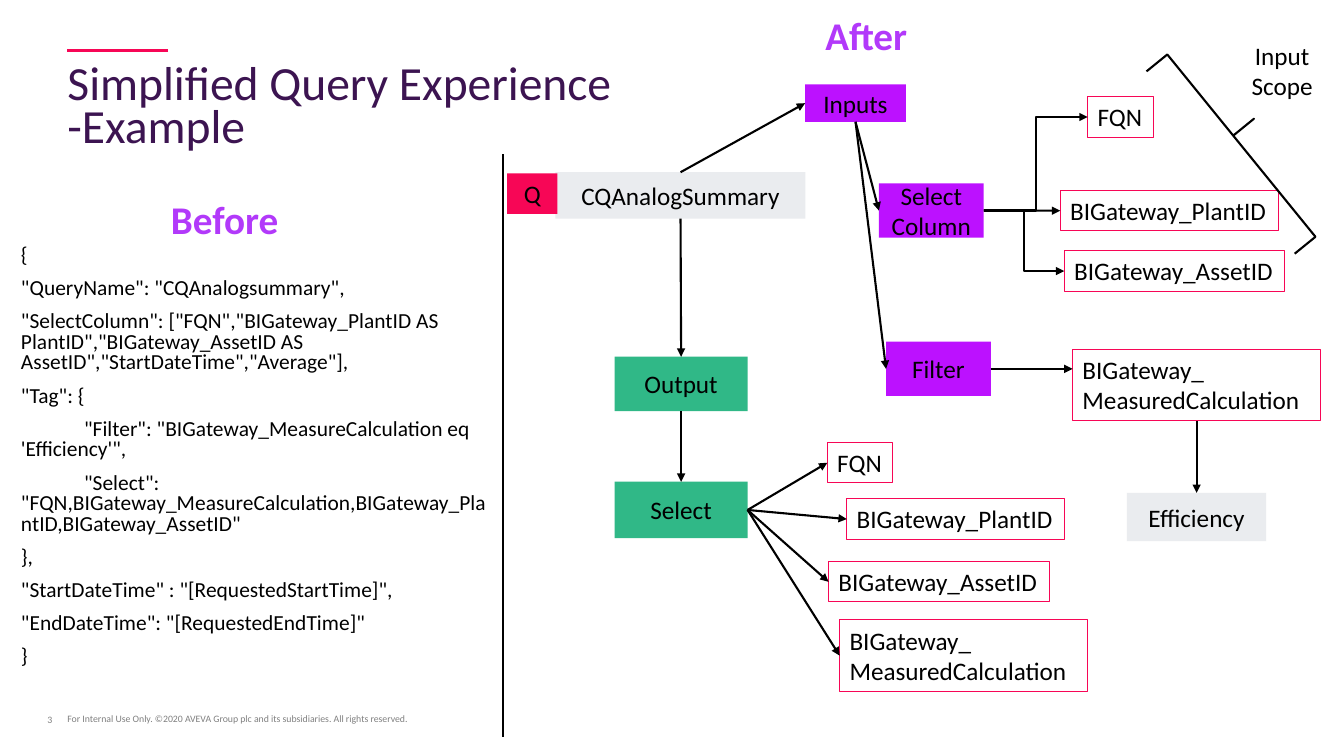
"""Builds a slide that sets a JSON query beside its simplified diagram."""
from dataclasses import dataclass

from lxml import etree
from pptx import Presentation, util as u
from pptx.dml.color import RGBColor
from pptx.enum import shapes, text
from pptx.oxml import ns


@dataclass(frozen=True)
class Theme:
    font: str = "Calibri"
    ink: str = "000000"
    title: str = "3C1451"
    heading: str = "B239FA"
    footer: str = "808080"
    accent: str = "FBBA3F"
    red: str = "F70656"
    grey: str = "EAECEF"
    purple: str = "BC11FF"
    green: str = "30B887"
    title_size: float = 34
    heading_size: float = 28
    node_size: float = 18
    code_size: float = 15.3
    footer_size: float = 7
    line_width: float = 1.5
    border_width: float = 0.75


THEME = Theme(accent="F70656")
LEFT, CENTER, RIGHT = text.PP_ALIGN.LEFT, text.PP_ALIGN.CENTER, text.PP_ALIGN.RIGHT
TOP, MIDDLE, BOTTOM = text.MSO_ANCHOR.TOP, text.MSO_ANCHOR.MIDDLE, text.MSO_ANCHOR.BOTTOM

TITLE = "Simplified Query Experience -Example"
FOOTER = "For Internal Use Only. ©2020 AVEVA Group plc and its subsidiaries. All rights reserved."
PAGE_NUMBER = "3"
QUERY = [
    "{",
    '"QueryName": "CQAnalogsummary",',
    '"SelectColumn": ["FQN","BIGateway_PlantID AS PlantID","BIGateway_AssetID AS AssetID",'
    '"StartDateTime","Average"],',
    '"Tag": {',
    "             \"Filter\": \"BIGateway_MeasureCalculation eq 'Efficiency'\",",
    '             "Select": "FQN,BIGateway_MeasureCalculation,BIGateway_PlantID,BIGateway_AssetID"',
    "},",
    '"StartDateTime" : "[RequestedStartTime]",',
    '"EndDateTime": "[RequestedEndTime]"',
    "}",
]
HEADINGS = [("Before", (4.06, 4.8, 3.25, 1.45)), ("After", (20.55, 0.15, 2.64, 1.45))]

STEPS = {
    "summary": (["CQAnalogSummary"], (14, 4.34, 6.3, 1.17), THEME.grey),
    "query": (["Q"], (12.78, 4.37, 1.27, 1.02), THEME.red),
    "inputs": (["Inputs"], (20.29, 2.13, 2.54, 0.94), THEME.purple),
    "columns": (["Select", "Column"], (22.15, 4.62, 2.64, 1.37), THEME.purple),
    "filter": (["Filter"], (22.33, 8.61, 2.64, 1.37), THEME.purple),
    "output": (["Output"], (15.49, 8.99, 3.35, 1.37), THEME.green),
    "select": (["Select"], (15.49, 12.14, 3.35, 1.42), THEME.green),
    "efficiency": (["Efficiency"], (28.4, 12.42, 3.51, 1.22), THEME.grey),
}
FIELDS = {
    "fqn": (["FQN"], (1.65, 1.02)),
    "plant": (["BIGateway_PlantID"], (5.49, 1.02)),
    "asset": (["BIGateway_AssetID"], (5.56, 1.02)),
    "measure": (["BIGateway_", "MeasuredCalculation"], (6.25, 1.8)),
}
FIELD_PLACES = {
    "input": {"fqn": (27.41, 2.44), "plant": (26.72, 4.8),
              "asset": (26.82, 6.32), "measure": (27.03, 8.81)},
    "output": {"fqn": (20.85, 11.15), "plant": (21.34, 12.57),
               "asset": (20.88, 14.15), "measure": (21.16, 15.62)},
}
SITES = {"top": (0, 0.5, 0), "left": (1, 0, 0.5), "bottom": (2, 0.5, 1), "right": (3, 1, 0.5)}
STRAIGHT, BENT = shapes.MSO_CONNECTOR.STRAIGHT, shapes.MSO_CONNECTOR.ELBOW
LINKS = [
    ("summary", "top", "inputs", "left", STRAIGHT),
    ("summary", "bottom", "output", "top", STRAIGHT),
    ("output", "bottom", "select", "top", STRAIGHT),
    ("inputs", "bottom", "columns", "left", STRAIGHT),
    ("inputs", "bottom", "filter", "left", STRAIGHT),
    ("columns", "right", "input fqn", "left", BENT),
    ("columns", "right", "input plant", "left", STRAIGHT),
    ("columns", "right", "input asset", "left", BENT),
    ("input measure", "bottom", "efficiency", "top", STRAIGHT),
] + [("select", "right", f"output {field}", "left", STRAIGHT) for field in FIELDS]


def write(shape, lines, size, color=THEME.ink, align=LEFT, anchor=TOP, bold=False,
          inset=True, wrap=True, spacing=None, after=None):
    frame = shape.text_frame
    frame.word_wrap = wrap
    frame.vertical_anchor = anchor
    if not inset:
        frame.margin_left = frame.margin_right = frame.margin_top = frame.margin_bottom = 0
    for index, line in enumerate(lines):
        paragraph = frame.add_paragraph() if index else frame.paragraphs[0]
        paragraph.alignment = align
        if spacing:
            paragraph.line_spacing = spacing
        if after:
            paragraph.space_after = u.Pt(after)
        run = paragraph.add_run()
        run.text = line
        run.font.name, run.font.size, run.font.bold = THEME.font, u.Pt(size), bold
        run.font.color.rgb = RGBColor.from_string(color)


def add_text(slide, box, lines, size, **style):
    write(slide.shapes.add_textbox(*map(u.Cm, box)), lines, size, **style)


def add_box(slide, box, fill=None, border=None, width=THEME.border_width,
            preset=shapes.MSO_SHAPE.RECTANGLE):
    shape = slide.shapes.add_shape(preset, *map(u.Cm, box))
    shape.shadow.inherit = False
    for part, color in ((shape.fill, fill), (shape.line.fill, border)):
        if color:
            part.solid()
            part.fore_color.rgb = RGBColor.from_string(color)
        else:
            part.background()
    if border:
        shape.line.width = u.Pt(width)
    return shape


def add_line(slide, start, end, color=THEME.ink, width=THEME.line_width, kind=STRAIGHT, arrow=False):
    line = slide.shapes.add_connector(kind, *start, *end)
    line.line.color.rgb = RGBColor.from_string(color)
    line.line.width = u.Pt(width)
    if arrow:
        etree.SubElement(line.line._get_or_add_ln(), ns.qn("a:tailEnd"), type="triangle")
    etree.SubElement(line._element.spPr, ns.qn("a:effectLst"))
    return line


def site_point(shape, side):
    _, across, down = SITES[side]
    return int(shape.left + shape.width * across), int(shape.top + shape.height * down)


def add_diagram(slide):
    nodes = {}
    for name, (lines, box, fill) in STEPS.items():
        nodes[name] = add_box(slide, box, fill=fill)
        write(nodes[name], lines, THEME.node_size, align=CENTER, anchor=MIDDLE)
    for group, places in FIELD_PLACES.items():
        for field, place in places.items():
            lines, extent = FIELDS[field]
            shape = nodes[f"{group} {field}"] = add_box(slide, place + extent, border=THEME.red)
            write(shape, lines, THEME.node_size, wrap=len(lines) > 1)
    for source, out_side, target, in_side, kind in LINKS:
        line = add_line(slide, site_point(nodes[source], out_side),
                        site_point(nodes[target], in_side), kind=kind, arrow=True)
        line.begin_connect(nodes[source], SITES[out_side][0])
        line.end_connect(nodes[target], SITES[in_side][0])
    start = site_point(nodes["filter"], "right")
    add_line(slide, start, (nodes["input measure"].left, start[1]), arrow=True)


def add_scope(slide):
    brace = add_box(slide, (30.61, 0.71, 1.35, 5.92), border=THEME.ink, width=THEME.line_width,
                    preset=shapes.MSO_SHAPE.RIGHT_BRACE)
    brace.adjustments[0], brace.adjustments[1] = 0, 0.445
    brace.rotation = 320.9
    add_text(slide, (30.94, 0.89, 2.74, 1.8), ["Input", "Scope"], THEME.node_size, align=CENTER)


def main():
    presentation = Presentation()
    presentation.slide_width, presentation.slide_height = u.Cm(33.87), u.Cm(19.05)
    slide = presentation.slides.add_slide(presentation.slide_layouts[6])
    add_line(slide, (u.Cm(4.24), u.Cm(1.27)), (u.Cm(1.7), u.Cm(1.27)), THEME.accent, 2)
    add_text(slide, (1.7, 1.63, 15.09, 2.24), [TITLE], THEME.title_size, color=THEME.title,
             anchor=MIDDLE, inset=False, spacing=0.75)
    add_text(slide, (0.53, 6.2, 11.99, 10.67), QUERY, THEME.code_size, inset=False,
             spacing=0.8, after=9)
    for box, line, align in (((1.7, 17.37, 19.96, 0.89), FOOTER, LEFT),
                             ((0.71, 17.78, 0.61, 0.51), PAGE_NUMBER, RIGHT)):
        add_text(slide, box, [line], THEME.footer_size, color=THEME.footer, align=align,
                 anchor=BOTTOM, inset=False)
    for heading, box in HEADINGS:
        add_text(slide, box, [heading], THEME.heading_size, color=THEME.heading, bold=True, wrap=False)
    add_line(slide, (u.Cm(12.67), u.Cm(3.89)), (u.Cm(12.67), u.Cm(18.57)))
    add_diagram(slide)
    add_scope(slide)
    presentation.save("out.pptx")


if __name__ == "__main__":
    main()
